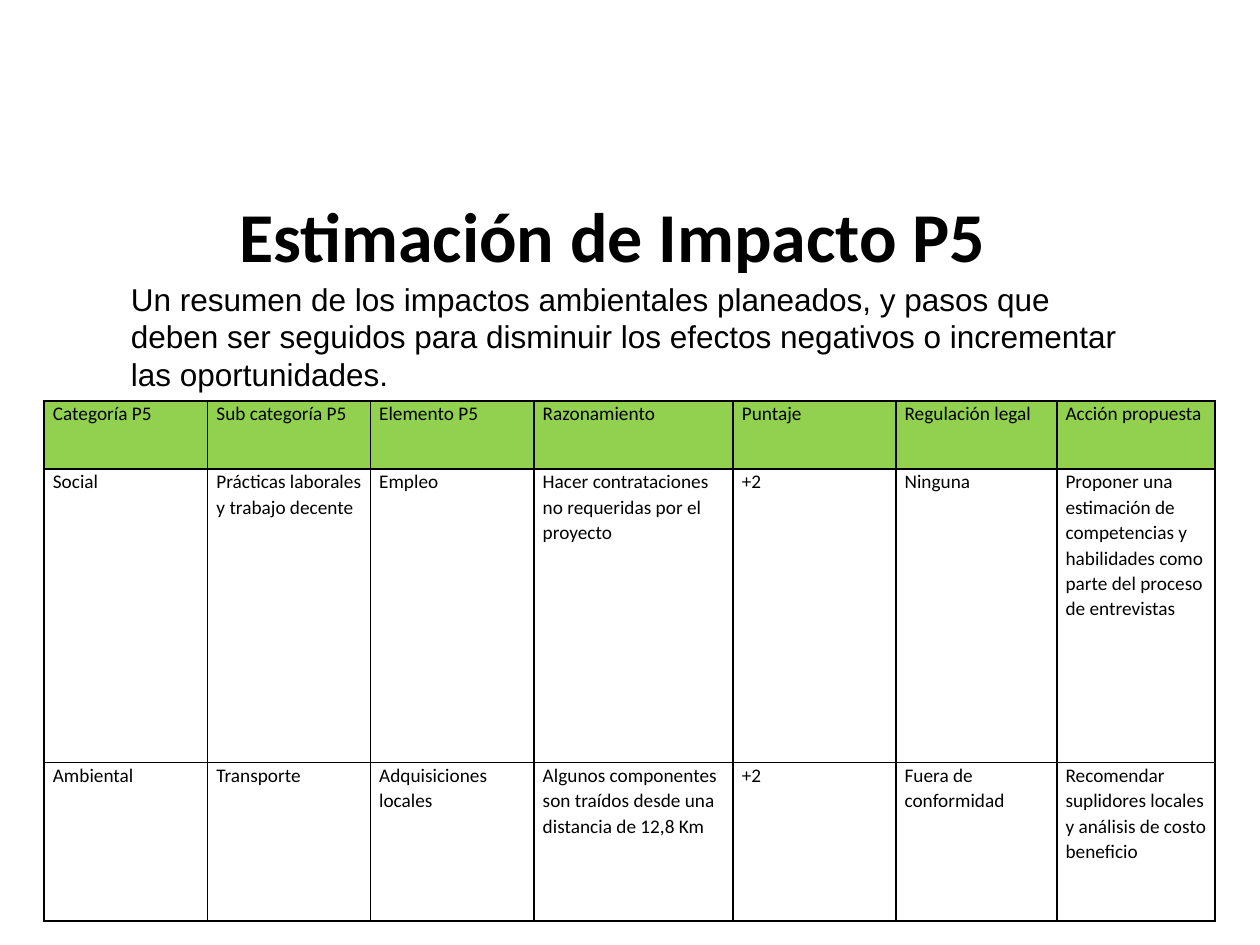
from dataclasses import dataclass
from lxml import etree
from pptx import Presentation
from pptx.dml.color import RGBColor
from pptx.enum import text as t
from pptx.oxml.ns import qn
from pptx.util import Pt

HUES = {"ink": "000000", "head": "92D050"}


@dataclass(frozen=True)
class Box:
    left: float
    top: float
    width: float
    height: float

    def points(self) -> list:
        return [Pt(v) for v in (self.left, self.top, self.width, self.height)]


TITLE = Box(69.8, 94.3, 524.2, 79.2)
INTRO = Box(67.7, 156.2, 594, 72.7)
GRID = Box(25.2, 229, 669.2, 297)

COLS = [93.5, 93, 93.5, 113.8, 93, 92, 90.4]
ROWS = [38.9, 167.8, 90.5]
CELLS = [
    ["Categoría P5", "Sub categoría P5", "Elemento P5", "Razonamiento",
     "Puntaje", "Regulación legal", "Acción propuesta"],
    ["Social", "Prácticas laborales y trabajo decente", "Empleo",
     "Hacer contrataciones no requeridas por el proyecto", "+2", "Ninguna",
     "Proponer una estimación de competencias y habilidades como parte "
     "del proceso de entrevistas"],
    ["Ambiental", "Transporte", "Adquisiciones locales",
     "Algunos componentes son traídos desde una distancia de 12,8 Km", "+2",
     "Fuera de conformidad",
     "Recomendar suplidores locales y análisis de costo beneficio"],
]


def write(frame, words: str, *, size: float, face: str = "Calibri",
          bold: bool = False, align=t.PP_ALIGN.LEFT,
          anchor=t.MSO_ANCHOR.TOP, space: float = 1) -> None:
    frame.word_wrap = True
    frame.vertical_anchor = anchor
    para = frame.paragraphs[0]
    para.alignment = align
    para.line_spacing = space
    run = para.add_run()
    run.text = words
    font = run.font
    font.size, font.name, font.bold = Pt(size), face, bold
    font.color.rgb = RGBColor.from_string(HUES["ink"])


def label(slide, box: Box, words: str, **style) -> None:
    write(slide.shapes.add_textbox(*box.points()).text_frame, words, **style)


def edge(cell) -> None:
    """Draw a 1 pt line on all four sides; call before the fill is set."""
    props = cell._tc.get_or_add_tcPr()
    for side in "LRTB":
        line = etree.SubElement(props, qn(f"a:ln{side}"), w=str(Pt(1)))
        fill = etree.SubElement(line, qn("a:solidFill"))
        etree.SubElement(fill, qn("a:srgbClr"), val=HUES["ink"])


def grid(slide, box: Box) -> None:
    table = slide.shapes.add_table(len(ROWS), len(COLS), *box.points()).table
    table.first_row = table.horz_banding = False
    for col, width in zip(table.columns, COLS):
        col.width = Pt(width)
    for r, (height, words) in enumerate(zip(ROWS, CELLS)):
        table.rows[r].height = Pt(height)
        for cell, word in zip(table.rows[r].cells, words):
            cell.margin_left = cell.margin_right = Pt(5)
            cell.margin_top = cell.margin_bottom = Pt(0)
            edge(cell)
            if r == 0:
                cell.fill.solid()
                cell.fill.fore_color.rgb = RGBColor.from_string(HUES["head"])
            else:
                cell.fill.background()
            write(cell.text_frame, word, size=11, space=1.07)


def main() -> None:
    deck = Presentation()
    deck.slide_width, deck.slide_height = Pt(720), Pt(540)
    slide = deck.slides.add_slide(deck.slide_layouts[6])
    label(slide, TITLE, "\tEstimación de Impacto P5", size=40, bold=True,
          align=t.PP_ALIGN.CENTER, anchor=t.MSO_ANCHOR.MIDDLE)
    label(slide, INTRO,
          "Un resumen de los impactos ambientales planeados, y pasos que deben "
          "ser seguidos para disminuir los efectos negativos o incrementar las "
          "oportunidades.", size=18, face="Arial")
    grid(slide, GRID)
    deck.save("out.pptx")


if __name__ == "__main__":
    main()
